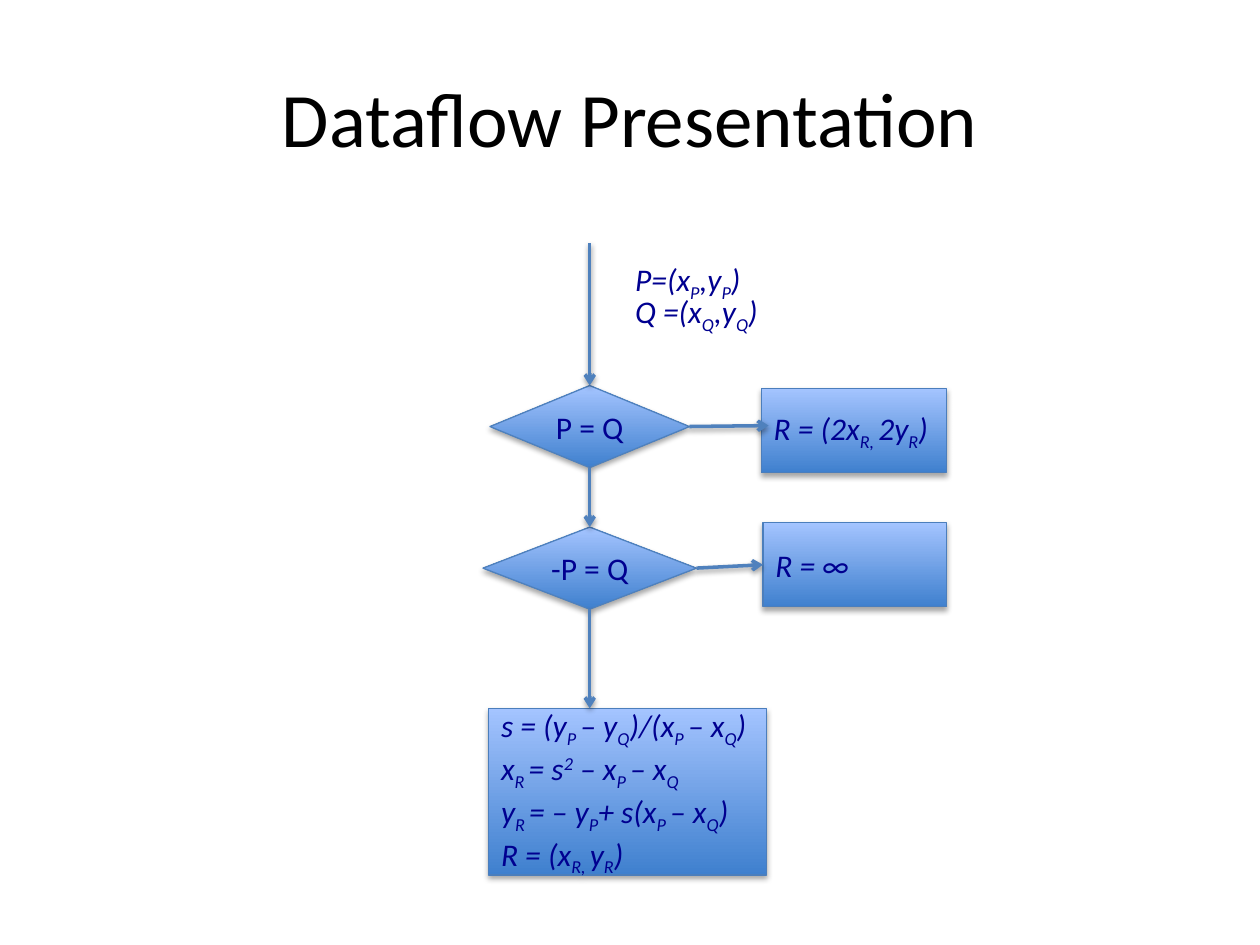
from dataclasses import dataclass

from lxml.etree import SubElement
from pptx import Presentation
from pptx.dml.color import RGBColor as RGB
from pptx.enum.shapes import MSO_CONNECTOR as Link, MSO_SHAPE as Shape
from pptx.enum.text import MSO_ANCHOR as Anchor, MSO_AUTO_SIZE as AutoSize, PP_ALIGN as Align
from pptx.oxml.ns import qn
from pptx.util import Pt


@dataclass(frozen=True)
class Theme:
    font: str = "Calibri"
    title_size: float = 44
    text_size: float = 18
    title: str = "000000"
    text: str = "000090"
    gradient: tuple = ("3F80CE", "A4C4FF")
    box_border: str = "4B7EBC"
    flow_line: str = "4F81BD"
    shadow: str = "000000"


TOP, LEFT, BOTTOM, RIGHT = range(4)
BASELINES = {"_": "-25000", "^": "30000"}


def write(frame, *lines, font, size, color, italic=False, align=Align.LEFT):
    """Split each line at | into runs; a leading _ or ^ lowers or raises the run."""
    for index, line in enumerate(lines):
        paragraph = frame.paragraphs[0] if index == 0 else frame.add_paragraph()
        paragraph.alignment = align
        for part in line.split("|"):
            baseline = BASELINES.get(part[0])
            run = paragraph.add_run()
            run.text = part[1:] if baseline else part
            run.font.name, run.font.size = font, Pt(size)
            run.font.italic = italic
            run.font.color.rgb = RGB.from_string(color)
            if baseline:
                run.font._element.set("baseline", baseline)


class FlowSlide:
    def __init__(self, slide, theme):
        self.slide, self.theme = slide, theme

    def _text(self, frame, *lines, **style):
        write(frame, *lines, **{"font": self.theme.font, "size": self.theme.text_size,
                                "color": self.theme.text, **style})

    def _shadow(self, element, opacity, distance):
        effects = SubElement(element.spPr, qn("a:effectLst"))
        outer = SubElement(effects, qn("a:outerShdw"), blurRad=str(Pt(3.15)),
                           dist=str(Pt(distance)), dir="5400000", rotWithShape="0")
        color = SubElement(outer, qn("a:srgbClr"), val=self.theme.shadow)
        SubElement(color, qn("a:alpha"), val=str(opacity * 1000))

    def title(self, text, left, top, width, height):
        heading = self.slide.shapes.title
        heading.left, heading.top = Pt(left), Pt(top)
        heading.width, heading.height = Pt(width), Pt(height)
        heading.text_frame.vertical_anchor = Anchor.MIDDLE
        self._text(heading.text_frame, text, size=self.theme.title_size,
                   color=self.theme.title, align=Align.CENTER)

    def _node(self, kind, left, top, width, height, border, *lines, **style):
        node = self.slide.shapes.add_shape(kind, Pt(left), Pt(top), Pt(width), Pt(height))
        node.fill.gradient()
        node.fill.gradient_angle = 90
        for stop, color in zip(node.fill.gradient_stops, self.theme.gradient):
            stop.color.rgb = RGB.from_string(color)
        node.line.color.rgb = RGB.from_string(border)
        node.line.width = Pt(0.75)
        self._shadow(node._element, 35, 1.8)
        node.text_frame.word_wrap = True
        node.text_frame.vertical_anchor = Anchor.MIDDLE
        self._text(node.text_frame, *lines, **style)
        return node

    def decision(self, text, center, top, width, height):
        return self._node(Shape.FLOWCHART_DECISION, center - width / 2, top, width, height,
                          self.theme.flow_line, text, align=Align.CENTER)

    def result(self, lines, left, top, width, height, kind=Shape.FLOWCHART_PROCESS):
        return self._node(kind, left, top, width, height,
                          self.theme.box_border, *lines, italic=True)

    def arrow(self, start, end, source=None, target=None):
        arrow = self.slide.shapes.add_connector(Link.STRAIGHT, *map(Pt, start + end))
        if source:
            arrow.begin_connect(*source)
        if target:
            arrow.end_connect(*target)
        arrow.line.color.rgb = RGB.from_string(self.theme.flow_line)
        arrow.line.width = Pt(2)
        SubElement(arrow.line._get_or_add_ln(), qn("a:tailEnd"), type="arrow")
        self._shadow(arrow._element, 38, 1.6)

    def label(self, text, left, top, width, height):
        label = self.slide.shapes.add_textbox(Pt(left), Pt(top), Pt(width), Pt(height))
        label.text_frame.word_wrap = False
        label.text_frame.auto_size = AutoSize.SHAPE_TO_FIT_TEXT
        self._text(label.text_frame, text, italic=True)


def main():
    deck = Presentation()
    deck.slide_width, deck.slide_height = Pt(720), Pt(540)
    flow = FlowSlide(deck.slides.add_slide(deck.slide_layouts[5]), Theme())
    flow.title("Dataflow Presentation", 36, 21.6, 648, 90)

    axis = 337
    equal_top, negated_top, addition_top, height = 220.3, 301.2, 404.8, 46.9

    flow.result([
        "s = (y|_P |– y|_Q|)/(x|_P |– x|_Q|)",
        "x|_R |= s|^2| – x|_P |– x|_Q",
        "y|_R |= – y|_P|+ s(x|_P |– x|_Q|)",
        "R = (x|_R, |y|_R|)",
    ], 279.2, addition_top, 159, 95.2, kind=Shape.RECTANGLE)
    equal = flow.decision("P = Q", axis, equal_top, 114, height)
    negated = flow.decision("-P = Q", axis, negated_top, 122, height)
    flow.result(["R = (2x|_R, |2y|_R|)"], 435, 222, 105.8, 48.2)
    infinity = flow.result(["R = ∞"], 436, 298.6, 105, 48.2)

    equal_middle = equal_top + height / 2
    negated_middle = negated_top + height / 2
    flow.arrow((axis, 139), (axis, equal_top), target=(equal, TOP))
    flow.arrow((axis, equal_top + height), (axis, negated_top),
               (equal, BOTTOM), (negated, TOP))
    flow.arrow((axis, negated_top + height), (axis, addition_top), (negated, BOTTOM))
    flow.arrow((394, equal_middle), (439.2, 243.2), (equal, RIGHT))
    flow.arrow((398, negated_middle), (436, 322.7), (negated, RIGHT), (infinity, LEFT))

    flow.label("P=(x|_P|,y|_P|)", 355.8, 145.3, 82, 29)
    flow.label("Q =(x|_Q|,y|_Q|)", 355.8, 163.6, 92, 29)
    deck.save("out.pptx")


if __name__ == "__main__":
    main()
